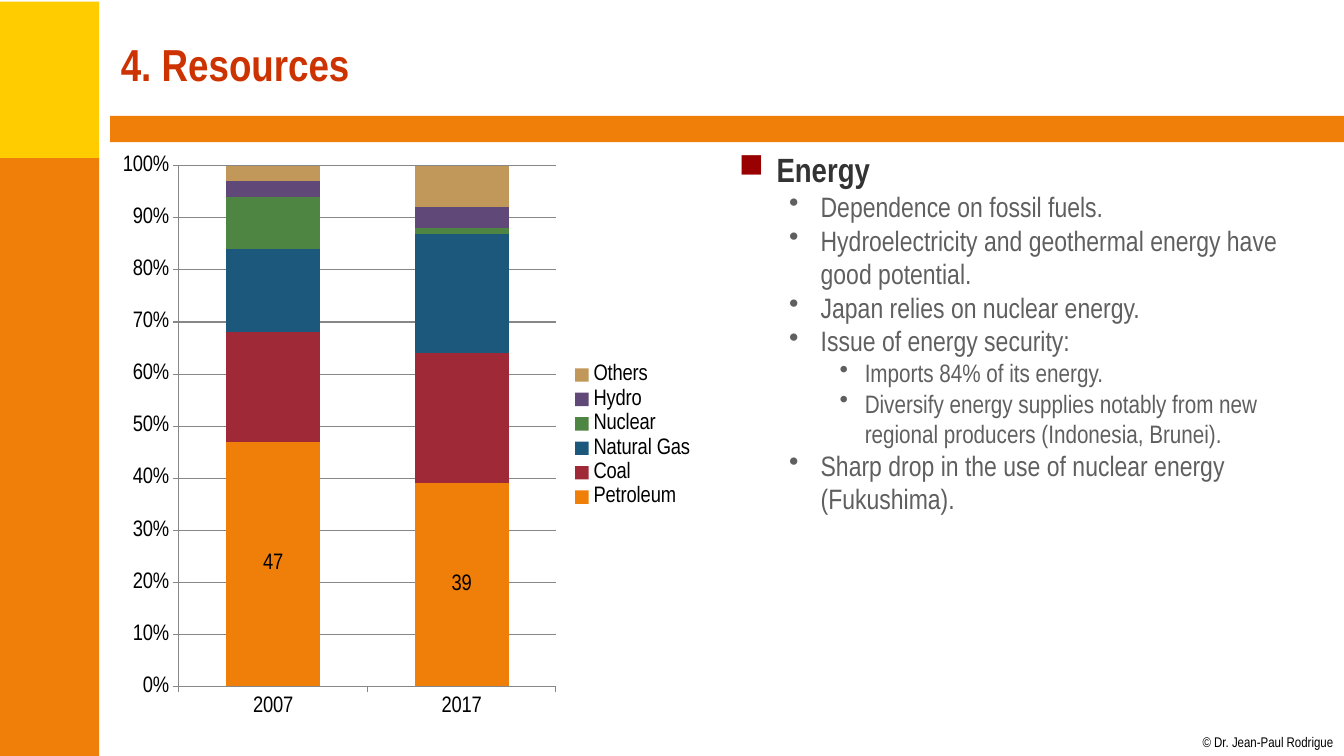
from dataclasses import dataclass

from lxml.etree import SubElement
from pptx import Presentation
from pptx.chart.data import CategoryChartData
from pptx.dml.color import RGBColor
from pptx.enum.chart import XL_CHART_TYPE, XL_LEGEND_POSITION, XL_TICK_MARK
from pptx.enum.shapes import MSO_SHAPE
from pptx.enum.text import MSO_ANCHOR
from pptx.oxml.ns import qn
from pptx.util import Pt


@dataclass
class Theme:
    face: str = "Arial Narrow"
    gold: str = "FFCC00"
    orange: str = "F07F09"
    red: str = "CC3300"
    mark: str = "990000"
    dark: str = "333333"
    gray: str = "5F5F5F"
    black: str = "000000"
    line: str = "878787"
    title: int = 32
    head: int = 24
    body: int = 20
    sub: int = 18
    chart: int = 16
    note: int = 10


class Deck:
    def __init__(self, theme):
        self.theme = theme
        self.show = Presentation()
        self.show.slide_width, self.show.slide_height = Pt(960), Pt(540)
        self.slide = self.show.slides.add_slide(self.show.slide_layouts[6])

    def style(self, font, size, color, bold=False):
        font.name, font.size, font.bold = self.theme.face, Pt(size), bold
        font.color.rgb = RGBColor.from_string(color)

    def block(self, box, color):
        shape = self.slide.shapes.add_shape(MSO_SHAPE.RECTANGLE, *map(Pt, box))
        shape.shadow.inherit = False
        shape.fill.solid()
        shape.fill.fore_color.rgb = RGBColor.from_string(color)
        shape.line.fill.background()

    def frame(self, box, wrap=True):
        frame = self.slide.shapes.add_textbox(*map(Pt, box)).text_frame
        frame.word_wrap = wrap
        return frame

    def label(self, box, text, size, color, bold=False, tight=False):
        frame = self.frame(box, not tight)
        frame.vertical_anchor = MSO_ANCHOR.TOP if tight else MSO_ANCHOR.MIDDLE
        if tight:
            frame.margin_left = frame.margin_right = 0
            frame.margin_top = frame.margin_bottom = 0
        para = frame.paragraphs[0]
        para.text = text
        self.style(para.font, size, color, bold)

    def bullets(self, box, items):
        look = self.theme
        levels = [
            (27, 27, "■", look.mark, look.head, look.dark),
            (58.5, 22.5, "•", look.gray, look.body, look.gray),
            (90, 18, "•", look.gray, look.sub, look.gray),
        ]
        frame = self.frame(box)
        for spot, (level, text) in enumerate(items):
            left, hang, sign, tint, size, color = levels[level]
            para = frame.add_paragraph() if spot else frame.paragraphs[0]
            para.text = text
            para.level = level
            props = para._p.get_or_add_pPr()
            props.set("marL", str(Pt(left)))
            props.set("indent", str(-Pt(hang)))
            SubElement(SubElement(props, qn("a:buClr")), qn("a:srgbClr"), val=tint)
            SubElement(props, qn("a:buChar"), char=sign)
            self.style(para.font, size, color, level == 0)

    def stack(self, box, years, rows):
        look = self.theme
        data = CategoryChartData()
        data.categories = years
        for name, values, _ in rows:
            data.add_series(name, values)
        chart = self.slide.shapes.add_chart(
            XL_CHART_TYPE.COLUMN_STACKED_100, *map(Pt, box), data).chart
        self.style(chart.font, look.chart, look.black)
        chart.has_title = False
        chart.has_legend = True
        chart.legend.position = XL_LEGEND_POSITION.RIGHT
        chart.legend.include_in_layout = False
        plot = chart.plots[0]
        plot.gap_width = plot.overlap = 100
        plot.vary_by_categories = False
        for series, (_, _, color) in zip(plot.series, rows):
            series.format.fill.solid()
            series.format.fill.fore_color.rgb = RGBColor.from_string(color)
        labels = plot.series[0].data_labels
        labels.show_value = True
        self.style(labels.font, look.chart, look.black)
        scale = chart.value_axis
        scale.has_major_gridlines = True
        scale.maximum_scale, scale.major_unit = 1, 0.1
        scale.tick_labels.number_format = "0%"
        scale.tick_labels.number_format_is_linked = False
        for axis in (scale, chart.category_axis):
            axis.major_tick_mark = XL_TICK_MARK.OUTSIDE
        for part in (scale, scale.major_gridlines, chart.category_axis):
            part.format.line.width = Pt(0.75)
            part.format.line.color.rgb = RGBColor.from_string(look.line)


def main():
    look = Theme()
    deck = Deck(look)
    deck.block((-1.2, 1.2, 72, 113.8), look.gold)
    deck.block((-1.2, 113, 72, 427), look.orange)
    deck.block((78.7, 82.8, 881.3, 18.8), look.orange)
    deck.label((859, 524.2, 94.3, 12.2), "© Dr. Jean-Paul Rodrigue",
               look.note, look.black, tight=True)
    deck.label((79.2, 8, 864, 75), "4. Resources", look.title, look.red, bold=True)
    deck.stack((79.2, 103, 425, 417), ["2007", "2017"], [
        ("Petroleum", (47, 39), look.orange),
        ("Coal", (21, 25), "9F2936"),
        ("Natural Gas", (16, 23), "1B587C"),
        ("Nuclear", (10, 1), "4E8542"),
        ("Hydro", (3, 4), "604878"),
        ("Others", (3, 8), "C19859"),
    ])
    deck.bullets((520.6, 103, 425, 417), [
        (0, "Energy"),
        (1, "Dependence on fossil fuels."),
        (1, "Hydroelectricity and geothermal energy have good potential."),
        (1, "Japan relies on nuclear energy."),
        (1, "Issue of energy security:"),
        (2, "Imports 84% of its energy."),
        (2, "Diversify energy supplies notably from new regional producers "
            "(Indonesia, Brunei)."),
        (1, "Sharp drop in the use of nuclear energy (Fukushima)."),
    ])
    deck.show.save("out.pptx")


if __name__ == "__main__":
    main()
